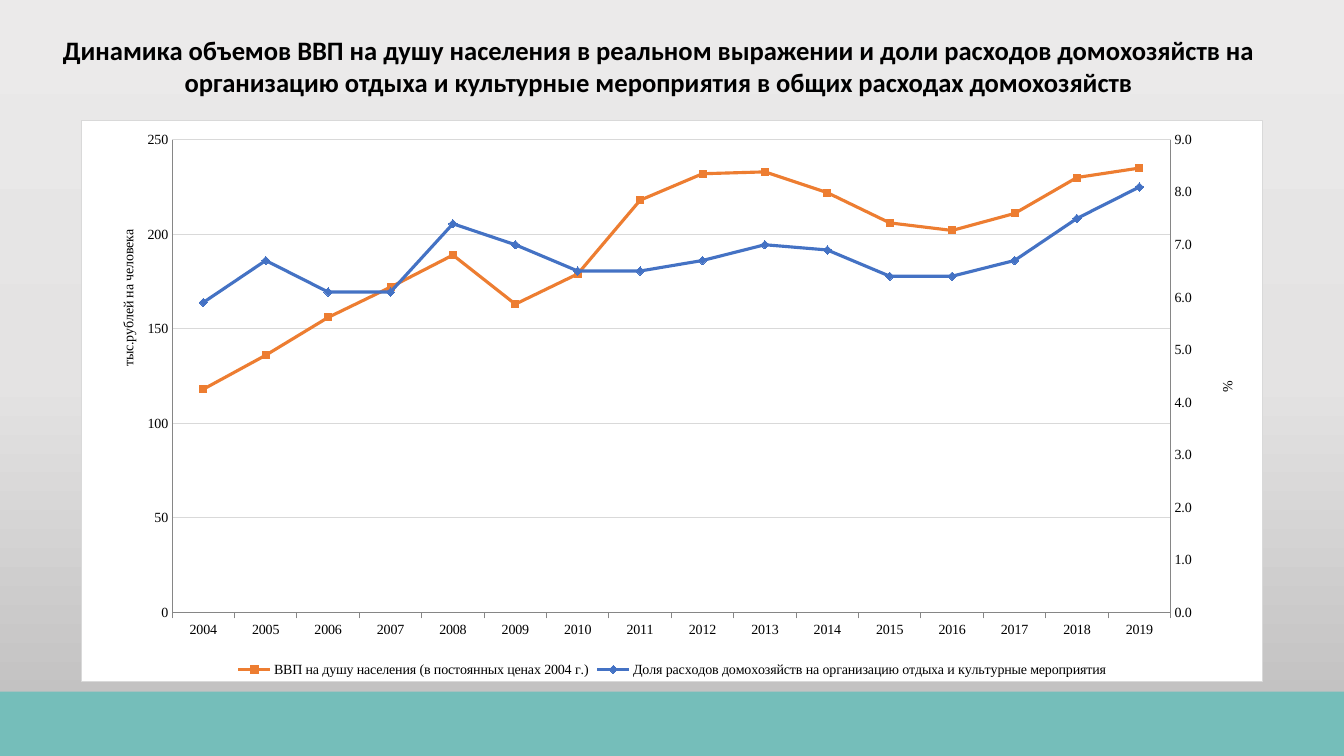
from copy import deepcopy

from pptx import Presentation
from pptx import util as u
from pptx.chart import axis as ax
from pptx.chart import data as cd
from pptx.dml.color import RGBColor
from pptx.enum import chart as ec
from pptx.enum import shapes, text
from pptx.oxml import parse_xml
from pptx.oxml.ns import nsdecls, qn

COLORS = {
    "text": "000000", "band": "75BEBA", "paper": "FFFFFF", "grid": "D9D9D9",
    "axis": "868686", "gdp": "ED7D31", "share": "4472C4",
}
BACKDROP = [(0, "EBEAEA"), (0.5, "E4E3E3"), (1, "BDBCBC")]
TITLE = ("Динамика объемов ВВП на душу населения в реальном выражении и доли расходов "
         "домохозяйств на организацию отдыха и культурные мероприятия в общих расходах "
         "домохозяйств")
YEARS = [str(year) for year in range(2004, 2020)]
GDP = [118, 136, 156, 172, 189, 163, 179, 218, 232, 233, 222, 206, 202, 211, 230, 235]
SHARE = [5.9, 6.7, 6.1, 6.1, 7.4, 7, 6.5, 6.5, 6.7, 7, 6.9, 6.4, 6.4, 6.7, 7.5, 8.1]
SERIES = [
    ("ВВП на душу населения (в постоянных ценах 2004 г.)", GDP, "gdp",
     {"style": ec.XL_MARKER_STYLE.SQUARE, "size": 5}),
    ("Доля расходов домохозяйств на организацию отдыха и культурные мероприятия", SHARE,
     "share", {"style": ec.XL_MARKER_STYLE.DIAMOND, "size": 6}),
]
LEFT_AXIS = {"minimum_scale": 0, "maximum_scale": 250, "major_unit": 50,
             "major_tick_mark": ec.XL_TICK_MARK.NONE}
RIGHT_AXIS = {"maximum_scale": 9, "major_unit": 1, "has_major_gridlines": False}


def rgb(name):
    return RGBColor.from_string(COLORS[name])


def apply(target, values):
    for name, value in values.items():
        setattr(target, name, value)


def outline(line, color, points):
    line.color.rgb = rgb(color)
    line.width = u.Pt(points)


def place(part, inner=False, **shares):
    """Fix a chart part at the given shares of the chart's size."""
    for old in part.findall(qn("c:layout")):
        part.remove(old)
    target = '<c:layoutTarget val="inner"/>' if inner else ""
    modes = '<c:xMode val="edge"/><c:yMode val="edge"/>'
    sizes = "".join(f'<c:{key} val="{share}"/>' for key, share in shares.items())
    layout = parse_xml(f'<c:layout {nsdecls("c")}><c:manualLayout>{target}{modes}{sizes}'
                       '</c:manualLayout></c:layout>')
    part.insert(0 if part.find(qn("c:tx")) is None else 1, layout)


class Deck:
    title_font = {"name": "Calibri", "size": u.Pt(19), "bold": True}
    chart_font = {"name": "Times New Roman", "size": u.Pt(10), "bold": False}

    def __init__(self):
        self.prs = Presentation()
        apply(self.prs, {"slide_width": u.Inches(13.33), "slide_height": u.Inches(7.5)})
        self.slide = self.prs.slides.add_slide(self.prs.slide_layouts[5])

    def box(self, left, top, width, height):
        """Turn shares of the slide's size into lengths."""
        wide, high = self.prs.slide_width, self.prs.slide_height
        return int(left * wide), int(top * high), int(width * wide), int(height * high)

    def style(self, font, values):
        apply(font, values)
        font.color.rgb = rgb("text")

    def backdrop(self, stops):
        fill = self.slide.background.fill
        fill.gradient()
        fill.gradient_angle = 270
        first = self.slide.element.find(".//" + qn("a:gs"))
        first.addnext(deepcopy(first))
        for stop, (position, color) in zip(fill.gradient_stops, stops):
            stop.color.rgb = RGBColor.from_string(color)
            stop.position = position

    def band(self, *shares):
        strip = self.slide.shapes.add_shape(shapes.MSO_SHAPE.RECTANGLE, *self.box(*shares))
        strip.shadow.inherit = False
        strip.fill.solid()
        strip.fill.fore_color.rgb = rgb("band")
        strip.line.fill.background()

    def title(self, wording, *shares):
        heading = self.slide.shapes.title
        apply(heading, dict(zip(("left", "top", "width", "height"), self.box(*shares))))
        frame = heading.text_frame
        apply(frame, {"text": wording, "word_wrap": True,
                      "auto_size": text.MSO_AUTO_SIZE.NONE,
                      "vertical_anchor": text.MSO_ANCHOR.MIDDLE})
        frame.paragraphs[0].alignment = text.PP_ALIGN.CENTER
        self.style(frame.paragraphs[0].runs[0].font, self.title_font)

    def axis_title(self, axis, wording, x, y):
        caption = axis.axis_title
        caption.text_frame.text = wording
        self.style(caption.text_frame.paragraphs[0].runs[0].font, self.chart_font)
        body = caption.element.find(".//" + qn("a:bodyPr"))
        body.set("rot", "-5400000")
        body.set("vert", "horz")
        place(caption.element, x=x, y=y)

    def second_axis(self, chart):
        """Move the last series to an axis on the right and return that axis."""
        area = chart.element.find(".//" + qn("c:plotArea"))
        lines = area.find(qn("c:lineChart"))
        right_lines = deepcopy(lines)
        lines.addnext(right_lines)
        lines.remove(lines.findall(qn("c:ser"))[1])
        right_lines.remove(right_lines.find(qn("c:ser")))
        years, values = area.find(qn("c:catAx")), area.find(qn("c:valAx"))
        right_years, right_values = deepcopy(years), deepcopy(values)
        values.addnext(right_values)
        right_values.addnext(right_years)
        ids = {years.find(qn("c:axId")).get("val"): "5001",
               values.find(qn("c:axId")).get("val"): "5002"}
        for part in (right_lines, right_years, right_values):
            for link in part.findall(qn("c:axId")) + part.findall(qn("c:crossAx")):
                link.set("val", ids[link.get("val")])
        right_values.find(qn("c:axPos")).set("val", "r")
        right_values.find(qn("c:crosses")).set("val", "max")
        ax.CategoryAxis(right_years).visible = False
        return ax.ValueAxis(right_values)

    def line_chart(self, *shares):
        table = cd.CategoryChartData()
        table.categories = YEARS
        for name, values, *_ in SERIES:
            table.add_series(name, values)
        chart = self.slide.shapes.add_chart(
            ec.XL_CHART_TYPE.LINE_MARKERS, *self.box(*shares), table).chart
        apply(chart, {"has_title": False, "has_legend": True})
        self.style(chart.font, self.chart_font)
        apply(chart.legend, {"position": ec.XL_LEGEND_POSITION.BOTTOM,
                             "include_in_layout": False})
        chart.element.find(qn("c:txPr")).addprevious(parse_xml(
            f'<c:spPr {nsdecls("c", "a")}>'
            f'<a:solidFill><a:srgbClr val="{COLORS["paper"]}"/></a:solidFill>'
            f'<a:ln w="9525"><a:solidFill><a:srgbClr val="{COLORS["grid"]}"/>'
            '</a:solidFill></a:ln></c:spPr>'))

        plot = chart.plots[0]
        plot.vary_by_categories = False
        for series, (_, _, color, marker) in zip(plot.series, SERIES):
            series.smooth = False
            outline(series.format.line, color, 2.25)
            apply(series.marker, marker)
            series.marker.format.fill.solid()
            series.marker.format.fill.fore_color.rgb = rgb(color)
            outline(series.marker.format.line, color, 0.75)

        years, left = chart.category_axis, chart.value_axis
        years.major_tick_mark = ec.XL_TICK_MARK.OUTSIDE
        apply(left, LEFT_AXIS)
        outline(left.major_gridlines.format.line, "grid", 0.75)
        for axis in (years, left):
            outline(axis.format.line, "axis", 0.75)
        right = self.second_axis(chart)
        apply(right, RIGHT_AXIS)
        for axis, pattern in ((left, "#,##0"), (right, "0.0")):
            apply(axis.tick_labels, {"number_format": pattern,
                                     "number_format_is_linked": False})
        self.axis_title(left, "тыс.рублей на человека", 0.03, 0.19)
        self.axis_title(right, "%", 0.96, 0.46)
        place(chart.element.find(".//" + qn("c:plotArea")), inner=True,
              x=0.077, y=0.034, w=0.845, h=0.843)


def main():
    deck = Deck()
    deck.backdrop(BACKDROP)
    deck.band(0, 0.915, 1, 0.085)
    deck.title(TITLE, 0, 0.03, 0.98, 0.115)
    deck.line_chart(0.06, 0.159, 0.88, 0.743)
    deck.prs.save("out.pptx")


if __name__ == "__main__":
    main()
